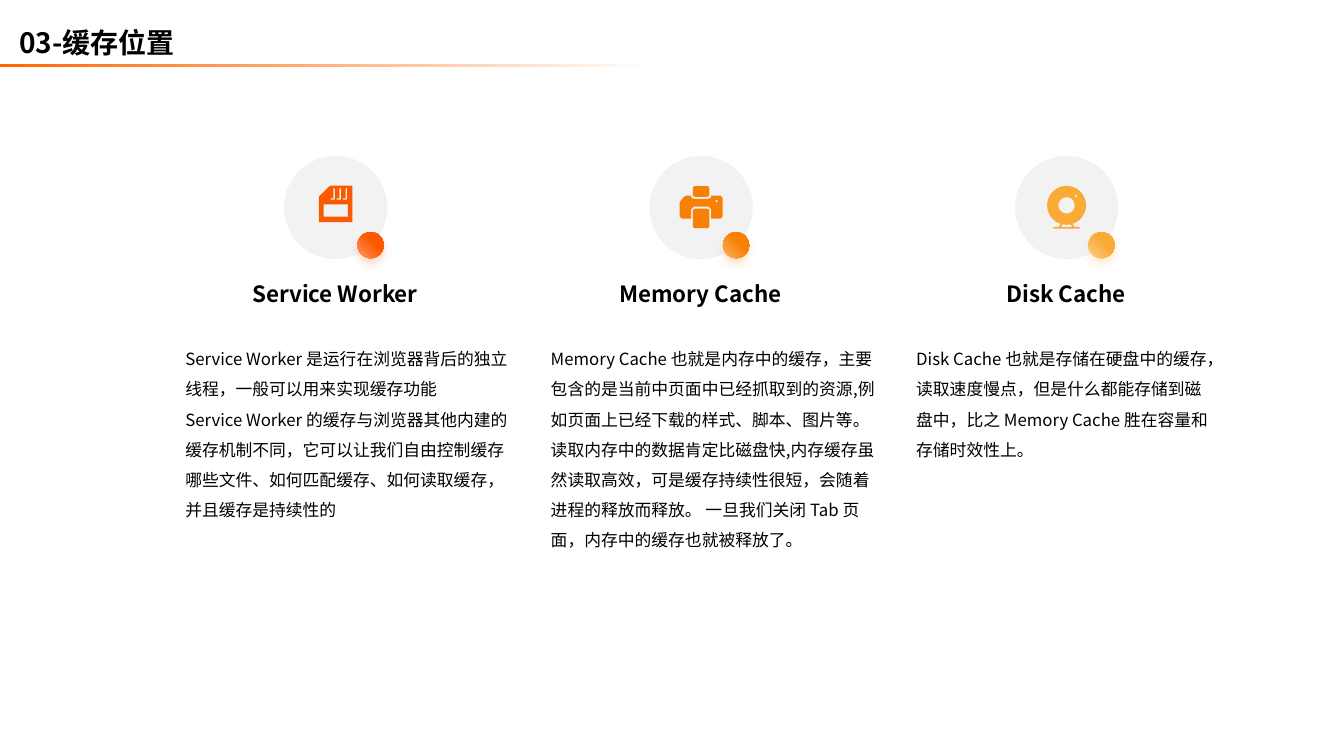
from math import cos, pi, sin

from lxml import etree
from pptx import Presentation
from pptx.dml.color import RGBColor
from pptx.enum.shapes import MSO_SHAPE
from pptx.enum.text import MSO_ANCHOR, MSO_AUTO_SIZE, PP_ALIGN
from pptx.oxml.ns import qn
from pptx.util import Cm, Pt

OVAL, RECT = MSO_SHAPE.OVAL, MSO_SHAPE.RECTANGLE
TOP, MIDDLE, BOTTOM = MSO_ANCHOR.TOP, MSO_ANCHOR.MIDDLE, MSO_ANCHOR.BOTTOM
LEFT, CENTER = PP_ALIGN.LEFT, PP_ALIGN.CENTER
FONT = "Noto Sans CJK SC"

HEADING = "03-缓存位置"
# title, colour, light colour, text width and height in cm, paragraphs
CACHES = [
    ("Service Worker", "FD5901", "FE9B66", 8.69, 5.08, [
        "Service Worker 是运行在浏览器背后的独立线程，一般可以用来实现缓存功能",
        "Service Worker 的缓存与浏览器其他内建的缓存机制不同，它可以让我们自由控制缓存"
        "哪些文件、如何匹配缓存、如何读取缓存，并且缓存是持续性的"]),
    ("Memory Cache", "F78104", "FDB366", 8.69, 6.73, [
        "Memory Cache 也就是内存中的缓存，主要包含的是当前中页面中已经抓取到的资源,"
        "例如页面上已经下载的样式、脚本、图片等。读取内存中的数据肯定比磁盘快,"
        "内存缓存虽然读取高效，可是缓存持续性很短，会随着进程的释放而释放。 "
        "一旦我们关闭 Tab 页面，内存中的缓存也就被释放了。"]),
    ("Disk Cache", "FAAB36", "FCCD86", 8.05, 3.45, [
        "Disk Cache 也就是存储在硬盘中的缓存，读取速度慢点，但是什么都能存储到磁盘中，"
        "比之 Memory Cache 胜在容量和存储时效性上。"]),
]


# Icon outlines, in millimetres from the centre of the icon's disc
def arc(x, y, radius, start=0, sweep=2 * pi, steps=48):
    return [(x + radius * cos(start + sweep * i / steps),
             y + radius * sin(start + sweep * i / steps)) for i in range(steps)]


def rounded(left, top, right, bottom, radius):
    corners = [(right, bottom), (left, bottom), (left, top), (right, top)]
    points = []
    for i, (x, y) in enumerate(corners):
        inner_x = x - radius if x == right else x + radius
        inner_y = y - radius if y == bottom else y + radius
        points += arc(inner_x, inner_y, radius, i * pi / 2, pi / 2, 6)
        points.append((inner_x + radius * cos((i + 1) * pi / 2),
                       inner_y + radius * sin((i + 1) * pi / 2)))
    return points


def mirrored(points):
    return [(-x, y) for x, y in points]


CARD_PIN = [(0, -2.3), (0.7, -2.3), (0.7, -4.8), (1.1, -4.8), (1.1, -2), (0, -2)]
CARD = [
    [(-1.4, -5.5), (4.2, -5.5), (4.2, 3.7), (-4.2, 3.7), (-4.2, -2.8)],
    [(-3.05, -0.8), (3.05, -0.8), (3.05, 2.3), (-3.05, 2.3)],
] + [[(start + x, y) for x, y in CARD_PIN] for start in (-1.3, 0.25, 1.8)]
PRINTER = [
    rounded(-2.1, -5.4, 2.1, -2.7, 0.6),
    rounded(-2.1, 0.3, 2.1, 5.2, 0.6),
    [(-2.5, -3), (-2.4, -2.4), (-1.7, -2.2), (1.7, -2.2), (2.4, -2.4), (2.5, -3),
     (4.9, -3), (5.4, -2.5), (5.4, 2.3), (4.9, 2.8), (2.5, 2.8), (2.5, 0.4),
     (1.9, -0.2), (-1.9, -0.2), (-2.5, 0.4), (-2.5, 2.8), (-4.9, 2.8),
     (-5.4, 2.3), (-5.4, -1.2), (-5.1, -1.8), (-4.2, -2.8), (-3.6, -3)],
    arc(3.9, -1.6, 0.3),
]
CAMERA_LEG = [(1.5, 4.11), (1, 4.25), (1.5, 4.9), (2, 4.9)]
CAMERA = [
    arc(0, -0.55, 4.9), arc(0, -0.55, 2.05), arc(2.4, -2.9, 0.3),
    CAMERA_LEG, mirrored(CAMERA_LEG),
    [(-3.3, 4.9), (3.3, 4.9), (3.3, 5.3), (-3.3, 5.3)],
]
ICONS = [CARD, PRINTER, CAMERA]

FIRST_CENTER, PITCH, DISC_MIDDLE = 8.46, 9.21, 5.23
DISC, DOT = 2.6, 0.66
DOT_SHIFT = (0.88, 0.95)
TEXT_SHIFT, TITLE_WIDTH = 4.04, 8.05


def color(value):
    return RGBColor.from_string(value)


def add_text(paragraphs, left, top, width, height, size=12, bold=False,
             align=LEFT, anchor=TOP, spacing=1.0, grow=True):
    box = slide.shapes.add_textbox(Cm(left), Cm(top), Cm(width), Cm(height))
    frame = box.text_frame
    frame.word_wrap = True
    frame.vertical_anchor = anchor
    frame.auto_size = MSO_AUTO_SIZE.SHAPE_TO_FIT_TEXT if grow else MSO_AUTO_SIZE.NONE
    for i, text in enumerate(paragraphs):
        paragraph = frame.add_paragraph() if i else frame.paragraphs[0]
        paragraph.alignment = align
        paragraph.line_spacing = spacing
        run = paragraph.add_run()
        run.text = text
        run.font.size = Pt(size)
        run.font.bold = bold
        run.font.color.rgb = color("000000")
        run.font.name = FONT
        etree.SubElement(run.font._element, qn("a:ea"), typeface=FONT)


def add_shape(kind, left, top, width, height):
    shape = slide.shapes.add_shape(kind, Cm(left), Cm(top), Cm(width), Cm(height))
    shape.shadow.inherit = False
    shape.line.fill.background()
    return shape


def add_circle(x, y, diameter):
    return add_shape(OVAL, x - diameter / 2, y - diameter / 2, diameter, diameter)


def fill_solid(shape, value, opacity=100):
    shape.fill.solid()
    shape.fill.fore_color.rgb = color(value)
    if opacity < 100:
        srgb = shape._element.spPr.find(".//" + qn("a:srgbClr"))
        etree.SubElement(srgb, qn("a:alpha"), val=str(opacity * 1000))


def fill_gradient(shape, start, end, end_at=1.0, angle=0):
    shape.fill.gradient()
    shape.fill.gradient_angle = angle
    for stop, value, position in zip(shape.fill.gradient_stops, (start, end), (0, end_at)):
        stop.color.rgb = color(value)
        stop.position = position


def add_glow_below(shape, value):
    effects = shape._element.spPr.find(qn("a:effectLst"))
    shadow = etree.SubElement(effects, qn("a:outerShdw"), blurRad=str(Pt(6)),
                              dist=str(Pt(4)), dir="5400000", rotWithShape="0")
    srgb = etree.SubElement(shadow, qn("a:srgbClr"), val=value)
    etree.SubElement(srgb, qn("a:alpha"), val="20000")


def add_icon(contours, x, y, value):
    builder = None
    for contour in contours:
        points = [(Cm(x + dx / 10), Cm(y + dy / 10)) for dx, dy in contour]
        if builder is None:
            builder = slide.shapes.build_freeform(*points[0])
        else:
            builder.move_to(*points[0])
        builder.add_line_segments(points[1:], close=True)
    icon = builder.convert_to_shape()
    icon.shadow.inherit = False
    icon.line.fill.background()
    fill_solid(icon, value)


presentation = Presentation()
presentation.slide_width, presentation.slide_height = Cm(33.87), Cm(19.05)
slide = presentation.slides.add_slide(presentation.slide_layouts[6])

add_text([HEADING], 0.23, 0.51, 21.03, 1.12, size=20, bold=True, anchor=MIDDLE, grow=False)
fill_gradient(add_shape(RECT, 0, 1.61, 16.5, 0.07), "FF6600", "FFFFFF")

for i, (title, main, light, width, height, paragraphs) in enumerate(CACHES):
    center = FIRST_CENTER + i * PITCH
    fill_solid(add_circle(center, DISC_MIDDLE, DISC), "808080", opacity=10)
    add_text(paragraphs, center - TEXT_SHIFT, 8.41, width, height, spacing=1.5)
    add_text([title], center - TEXT_SHIFT, 6.88, TITLE_WIDTH, 0.99, size=16, bold=True,
             align=CENTER, anchor=BOTTOM)
    add_icon(ICONS[i], center, DISC_MIDDLE, main)
    dot = add_circle(center + DOT_SHIFT[0], DISC_MIDDLE + DOT_SHIFT[1], DOT)
    fill_gradient(dot, light, main, end_at=0.6, angle=45)
    add_glow_below(dot, main)

presentation.save("out.pptx")
